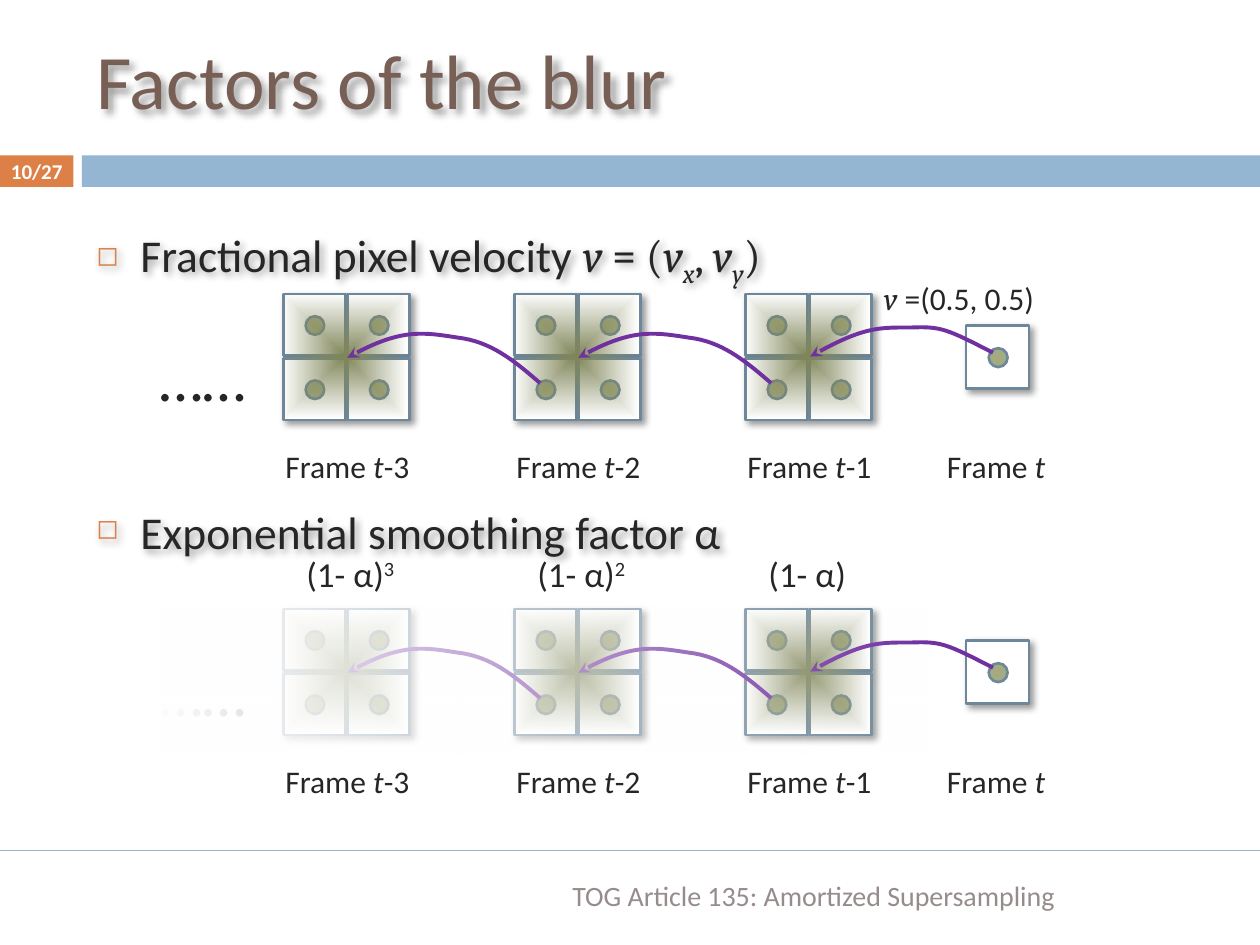
from dataclasses import dataclass

from pptx import Presentation
from pptx.dml.color import RGBColor
from pptx.enum.shapes import MSO_CONNECTOR, MSO_SHAPE
from pptx.enum.text import MSO_ANCHOR, MSO_AUTO_SIZE, PP_ALIGN
from pptx.oxml import parse_xml
from pptx.oxml.ns import nsdecls, qn
from pptx.util import Pt


@dataclass(frozen=True)
class Theme:
    sans: str = "Calibri"
    serif: str = "Cambria"
    white: str = "FFFFFF"
    accent: str = "DD8047"
    band: str = "94B6D2"
    title: str = "775F55"
    text: str = "262626"
    footer: str = "968C8C"
    outline: str = "6D879B"
    dot: str = "A5AB81"
    glow: str = "81875A"
    arrow: str = "7030A0"
    title_size: int = 44
    body_size: int = 26
    ellipsis_size: int = 36
    factor_size: int = 20
    label_size: int = 18
    footer_size: int = 16
    number_size: int = 12


theme = Theme()
NS = nsdecls("a")
SHADOW = (f'<a:effectLst {NS}><a:outerShdw blurRad="50800" dist="38100" dir="2700000" '
          'algn="tl" rotWithShape="0"><a:srgbClr val="000000"><a:alpha val="40000"/>'
          '</a:srgbClr></a:outerShdw></a:effectLst>')
GRADIENT = ('<a:gradFill {ns}><a:gsLst><a:gs pos="0"><a:srgbClr val="{color}"/></a:gs>'
            '<a:gs pos="100000"><a:srgbClr val="{color}"><a:alpha val="{alpha}"/></a:srgbClr>'
            '</a:gs></a:gsLst>{direction}</a:gradFill>')
FROM_CENTER = ('<a:path path="rect"><a:fillToRect l="50000" t="50000" r="50000" b="50000"/>'
               '</a:path>')
FROM_LEFT = '<a:lin ang="0" scaled="0"/>'
GLOW = GRADIENT.format(ns=NS, color=theme.glow, alpha=1000, direction=FROM_CENTER)
FADE = GRADIENT.format(ns=NS, color=theme.white, alpha=0, direction=FROM_LEFT)


def add_figure(shapes, kind, box, fill, outline=None, shadow=False):
    """Add a preset shape; fill is a colour or gradient XML."""
    shape = shapes.add_shape(kind, *map(Pt, box))
    properties = shape.element.spPr
    if fill.startswith("<"):
        shape.fill.background()
        properties.replace(properties.find(qn("a:noFill")), parse_xml(fill))
    else:
        shape.fill.solid()
        shape.fill.fore_color.rgb = RGBColor.from_string(fill)
    if outline:
        shape.line.color.rgb = RGBColor.from_string(outline)
        shape.line.width = Pt(1.5)
    else:
        shape.line.fill.background()
    if shadow:
        properties.append(parse_xml(SHADOW))
    else:
        shape.shadow.inherit = False


def add_text(box, paragraphs, size, color=theme.text, wrap=False, anchor=MSO_ANCHOR.TOP):
    """Add a text box; each paragraph is a list of (text, options) runs."""
    shape = slide.shapes.add_textbox(*map(Pt, box))
    frame = shape.text_frame
    frame.word_wrap = wrap
    frame.auto_size = MSO_AUTO_SIZE.NONE if wrap else MSO_AUTO_SIZE.SHAPE_TO_FIT_TEXT
    frame.vertical_anchor = anchor
    for index, runs in enumerate(paragraphs):
        paragraph = frame.add_paragraph() if index else frame.paragraphs[0]
        for text, options in runs:
            run = paragraph.add_run()
            run.text = text
            run.font.size = Pt(size)
            run.font.name = options.get("font", theme.sans)
            run.font.bold = options.get("bold", False)
            run.font.italic = options.get("italic", False)
            run.font.color.rgb = RGBColor.from_string(color)
            if "baseline" in options:
                run._r.get_or_add_rPr().set("baseline", str(options["baseline"] * 1000))
    return shape


presentation = Presentation()
presentation.slide_width, presentation.slide_height = Pt(720), Pt(540)
slide = presentation.slides.add_slide(presentation.slide_layouts[6])

# Header band, footer rule and footer
add_figure(slide.shapes, MSO_SHAPE.RECTANGLE, (0, 88.8, 42, 18), theme.accent)
add_figure(slide.shapes, MSO_SHAPE.RECTANGLE, (46.8, 88.8, 673.2, 18), theme.band)
rule = slide.shapes.add_connector(MSO_CONNECTOR.STRAIGHT, Pt(0), Pt(486), Pt(720), Pt(486))
rule.line.color.rgb = RGBColor.from_string(theme.band)
rule.line.width = Pt(0.8)
rule.element.spPr.append(parse_xml(f"<a:effectLst {NS}/>"))
footer = add_text((210, 498, 510, 27), [[("TOG Article 135: Amortized Supersampling", {})]],
                  theme.footer_size, theme.footer, wrap=True, anchor=MSO_ANCHOR.MIDDLE)
footer.text_frame.paragraphs[0].alignment = PP_ALIGN.CENTER

# Title and bullets
title = add_text((48, 6, 642, 78), [[("Factors of the blur", {})]], theme.title_size,
                 theme.title, wrap=True, anchor=MSO_ANCHOR.MIDDLE)
serif = {"font": theme.serif}
variable = {"font": theme.serif, "italic": True}
subscript = {**variable, "baseline": -25}
body = add_text((48, 126, 642, 354), [
    [("Fractional pixel velocity ", {}), ("v", variable), (" = ", {}), ("(", serif),
     ("v", variable), ("x", subscript), (", ", serif), ("v", variable), ("y", subscript),
     (")", serif)],
    [("Exponential smoothing factor α", {})],
], theme.body_size, wrap=True)
for paragraph in body.text_frame.paragraphs:
    properties = paragraph._p.get_or_add_pPr()
    properties.set("marL", str(Pt(25.2)))
    properties.set("indent", str(-Pt(25.2)))
    for bullet in (f'<a:buClr {NS}><a:srgbClr val="{theme.accent}"/></a:buClr>',
                   f'<a:buSzPct {NS} val="60000"/>', f'<a:buChar {NS} char="◻"/>'):
        properties.append(parse_xml(bullet))
body.text_frame.paragraphs[1].space_before = Pt(123)
for shape in (title, body):
    shape.element.spPr.append(parse_xml(SHADOW))

# Frame sequences: curve points are relative to the block that the arrow enters
BLOCK_LEFTS = {3: 162, 2: 294, 1: 426}
LONG_CURVE = [(146.6, 50.9), (130.8, 37.2), (117.8, 27.1), (99.8, 25),
              (81.1, 22.1), (66.7, 19.2), (36.5, 36.5)]
SHORT_CURVE = [(141.4, 33.6), (114.7, 19.9), (111.8, 18.5), (94.6, 19.2),
               (77.3, 19.2), (67.2, 18.5), (37, 35.8)]
CELL, CELL_PITCH = 35.3, 36.7

for top in (168, 348):
    # Pixels: one for the current frame, two by two for each earlier frame
    pixel_groups = [[(552, top + 18, 36)]]
    for left in BLOCK_LEFTS.values():
        pixel_groups.append([(left + column * CELL_PITCH, top + row * CELL_PITCH, CELL)
                             for row in range(2) for column in range(2)])
    for pixels in pixel_groups:
        group = slide.shapes.add_group_shape()
        for x, y, size in pixels:
            add_figure(group.shapes, MSO_SHAPE.RECTANGLE, (x, y, size, size), theme.white,
                       theme.outline, shadow=True)
            add_figure(group.shapes, MSO_SHAPE.OVAL,
                       (x + 0.36 * size, y + 0.36 * size, 0.3 * size, 0.3 * size),
                       theme.dot, theme.outline)
        if len(pixels) > 1:
            x, y, size = pixels[0]
            add_figure(group.shapes, MSO_SHAPE.RECTANGLE, (x, y + 0.5, 70, 70), GLOW)

    # Curved arrows, with each three points turned into a Bézier segment
    for age, left in BLOCK_LEFTS.items():
        curve = SHORT_CURVE if age == 1 else LONG_CURVE
        points = [(Pt(left + x), Pt(top + y)) for x, y in curve]
        builder = slide.shapes.build_freeform(*points[0])
        builder.add_line_segments(points[1:], close=False)
        arrow = builder.convert_to_shape()
        outline = arrow.element.spPr.find(".//" + qn("a:path"))
        lines = outline.findall(qn("a:lnTo"))
        for start in range(0, len(lines), 3):
            segment = parse_xml(f"<a:cubicBezTo {NS}/>")
            for line in lines[start:start + 3]:
                segment.append(line[0])
                outline.remove(line)
            outline.append(segment)
        arrow.fill.background()
        arrow.line.color.rgb = RGBColor.from_string(theme.arrow)
        arrow.line.width = Pt(2.25)
        arrow.line._get_or_add_ln().append(parse_xml(f'<a:tailEnd {NS} type="stealth"/>'))
        arrow.shadow.inherit = False

    # Frame labels
    add_text((84, top + 21.6, 64.8, 51), [[("……", {})]], theme.ellipsis_size)
    for age, left in BLOCK_LEFTS.items():
        add_text((left - 6, top + 84, 86.4, 28.8),
                 [[("Frame ", {}), ("t", {"italic": True}), (f"-{age}", {})]],
                 theme.label_size)
    add_text((534, top + 84, 71.3, 28.8), [[("Frame ", {}), ("t", {"italic": True})]],
             theme.label_size)

# Velocity and weight labels
add_text((498, 156, 116.6, 28.8), [[("v", variable), (" =(0.5, 0.5)", {})]], theme.label_size)
for age, left in BLOCK_LEFTS.items():
    runs = [("(1- α)", {})]
    if age > 1:
        runs.append((str(age), {"baseline": 30}))
    add_text((left + 6, 312, 66 if age > 1 else 59, 31.7), [runs], theme.factor_size)

# Fade over the older frames
add_figure(slide.shapes, MSO_SHAPE.RECTANGLE, (90, 345, 444, 87), FADE)

# Slide number
number = add_text((0, 88, 42, 19.4), [[("10/27", {"bold": True})]], theme.number_size,
                  theme.white, wrap=True, anchor=MSO_ANCHOR.MIDDLE)
number.text_frame.margin_left = number.text_frame.margin_right = 0
number.text_frame.paragraphs[0].alignment = PP_ALIGN.CENTER

presentation.save("out.pptx")
